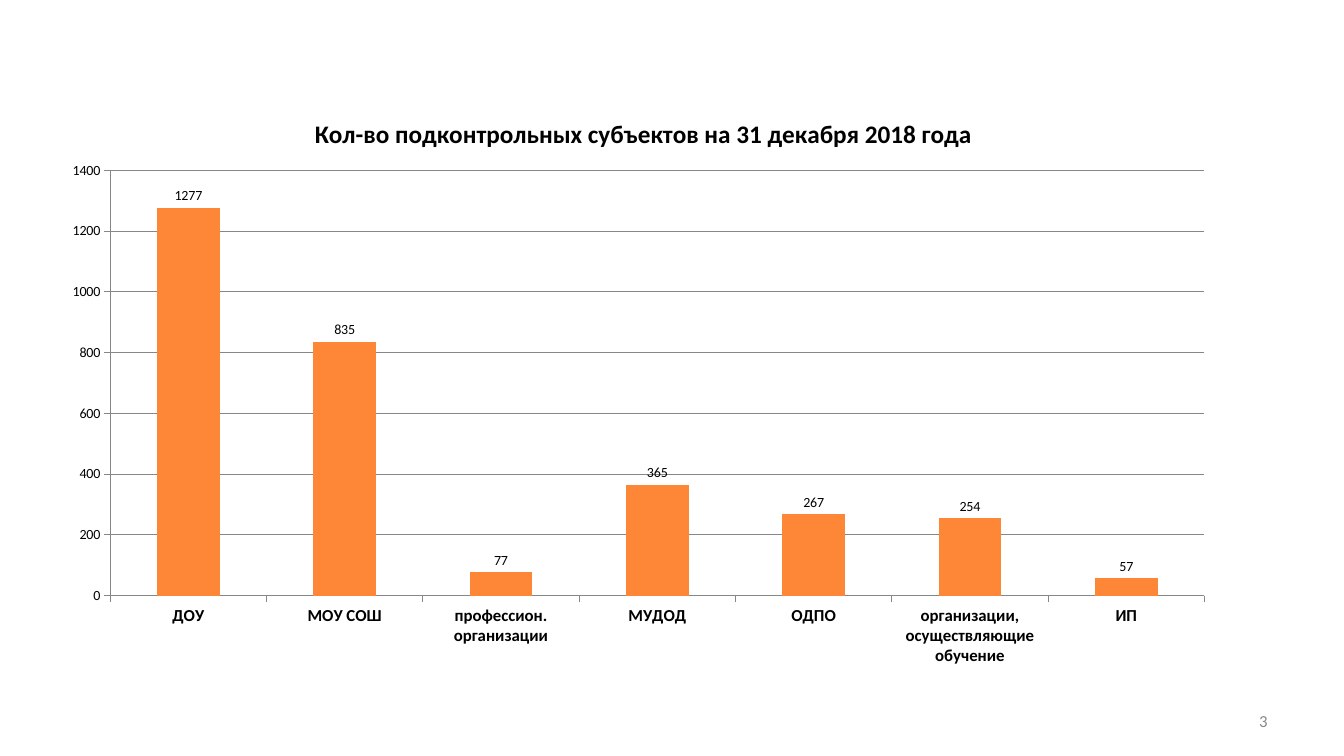
import pptx
import pptx.chart.data
import pptx.dml.color
import pptx.enum.chart
import pptx.enum.text
import pptx.oxml
import pptx.oxml.ns
import pptx.util

TITLE = "Кол-во подконтрольных субъектов на 31 декабря 2018 года"
SUBJECTS = {
    "ДОУ": 1277,
    "МОУ СОШ": 835,
    "профессион. организации": 77,
    "МУДОД": 365,
    "ОДПО": 267,
    "организации, осуществляющие обучение": 254,
    "ИП": 57,
}
PAGE_NUMBER = "3"

WIDTH, HEIGHT = 13.33, 7.5
CHART_BOX = (0.51, 0.87, 11.67, 5.86)
NUMBER_BOX = (9.56, 6.95, 3.11, 0.4)
PLOT_SHARES = {"x": 0.05, "y": 0.14, "w": 0.93, "h": 0.72}
TITLE_SHARES = {"x": 0.22, "y": 0.04}

THEME = {
    "font": "Calibri",
    "bar": "FE8637",
    "line": "878787",
    "title": {"size": 18, "bold": True, "color": "000000"},
    "label": {"size": 10, "bold": False, "color": "000000"},
    "category": {"size": 12, "bold": True, "color": "000000"},
    "number": {"size": 12, "bold": False, "color": "898989"},
}


def color(value):
    return pptx.dml.color.RGBColor.from_string(value)


def inches(box):
    return [pptx.util.Inches(length) for length in box]


def style_font(font, role):
    style = THEME[role]
    values = {"name": THEME["font"], "size": pptx.util.Pt(style["size"]), "bold": style["bold"]}
    for name, value in values.items():
        setattr(font, name, value)
    font.color.rgb = color(style["color"])


def style_line(line):
    line.color.rgb = color(THEME["line"])
    line.width = pptx.util.Pt(0.75)


def place(element, index, shares, target=""):
    for layout in element.findall(pptx.oxml.ns.qn("c:layout")):
        element.remove(layout)
    modes = "".join(f'<c:{key}Mode val="edge"/>' for key in shares if key in "xy")
    lengths = "".join(f'<c:{key} val="{share}"/>' for key, share in shares.items())
    element.insert(index, pptx.oxml.parse_xml(
        f'<c:layout {pptx.oxml.ns.nsdecls("c")}><c:manualLayout>'
        f"{target}{modes}{lengths}</c:manualLayout></c:layout>"))


def add_subject_chart(slide):
    data = pptx.chart.data.CategoryChartData()
    data.categories = list(SUBJECTS)
    data.add_series("Series 1", list(SUBJECTS.values()))
    kinds = pptx.enum.chart
    chart = slide.shapes.add_chart(
        kinds.XL_CHART_TYPE.COLUMN_CLUSTERED, *inches(CHART_BOX), data).chart
    style_font(chart.font, "label")
    chart.has_legend = False

    chart.has_title = True
    paragraph = chart.chart_title.text_frame.paragraphs[0]
    run = paragraph.add_run()
    run.text = TITLE
    style_font(run.font, "title")

    for axis, role in ((chart.category_axis, "category"), (chart.value_axis, "label")):
        axis.major_tick_mark = kinds.XL_TICK_MARK.OUTSIDE
        style_line(axis.format.line)
        style_font(axis.tick_labels.font, role)
    scale = {"minimum_scale": 0, "maximum_scale": 1400, "major_unit": 200,
             "has_major_gridlines": True}
    for name, value in scale.items():
        setattr(chart.value_axis, name, value)
    style_line(chart.value_axis.major_gridlines.format.line)

    plot = chart.plots[0]
    plot.vary_by_categories = False
    plot.gap_width = 150
    fill = plot.series[0].format.fill
    fill.solid()
    fill.fore_color.rgb = color(THEME["bar"])
    plot.has_data_labels = True
    labels = plot.data_labels
    labels.show_value = True
    labels.position = kinds.XL_LABEL_POSITION.OUTSIDE_END
    style_font(labels.font, "label")

    place(chart.chart_title._element, 1, TITLE_SHARES)
    plot_area = chart._chartSpace.find(".//" + pptx.oxml.ns.qn("c:plotArea"))
    place(plot_area, 0, PLOT_SHARES, '<c:layoutTarget val="inner"/>')


def add_page_number(slide):
    frame = slide.shapes.add_textbox(*inches(NUMBER_BOX)).text_frame
    frame.word_wrap = True
    frame.vertical_anchor = pptx.enum.text.MSO_ANCHOR.MIDDLE
    paragraph = frame.paragraphs[0]
    paragraph.alignment = pptx.enum.text.PP_ALIGN.RIGHT
    run = paragraph.add_run()
    run.text = PAGE_NUMBER
    style_font(run.font, "number")


def main():
    presentation = pptx.Presentation()
    presentation.slide_width, presentation.slide_height = inches((WIDTH, HEIGHT))
    slide = presentation.slides.add_slide(presentation.slide_layouts[6])
    add_page_number(slide)
    add_subject_chart(slide)
    presentation.save("out.pptx")


if __name__ == "__main__":
    main()
